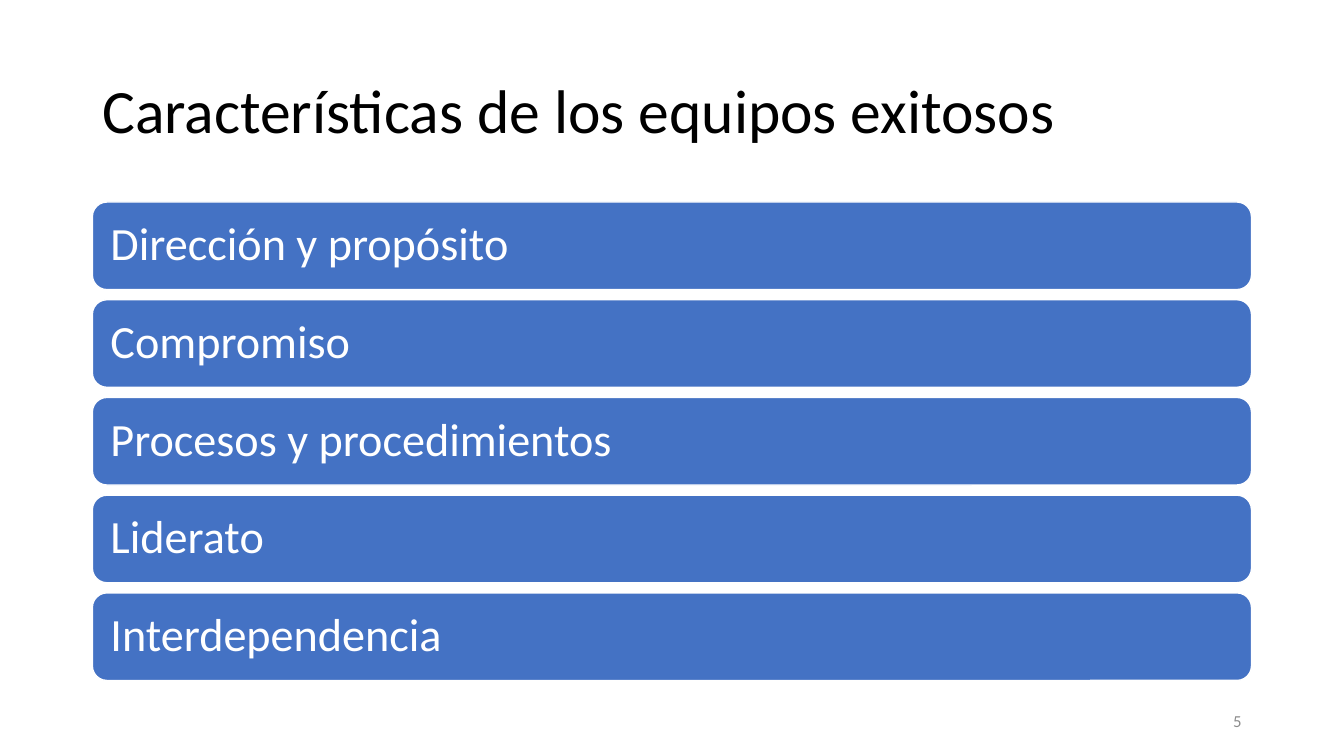
from pptx import Presentation
from pptx.dml.color import RGBColor
from pptx.enum import shapes, text
from pptx.util import Pt

COLORS = {"title": "000000", "bar": "4472C4", "white": "FFFFFF", "number": "8C8C8C"}
FONT = "Calibri"
LEFT, WIDTH = 66, 828
BARS_TOP, BAR_HEIGHT, BAR_PITCH = 144.3, 62.6, 69.8
TRAITS = [
    "Dirección y propósito",
    "Compromiso",
    "Procesos y procedimientos",
    "Liderato",
    "Interdependencia",
]


def color(name):
    return RGBColor.from_string(COLORS[name])


def write(shape, words, size, ink, align=text.PP_ALIGN.LEFT, spacing=1.0):
    """Fill a shape with one vertically centred line of text."""
    frame = shape.text_frame
    frame.text = words
    frame.word_wrap = True
    frame.vertical_anchor = text.MSO_ANCHOR.MIDDLE
    line = frame.paragraphs[0]
    line.alignment = align
    line.line_spacing = spacing
    font = line.runs[0].font
    font.name = FONT
    font.size = Pt(size)
    font.color.rgb = color(ink)


def add_label(slide, words, box, size, ink, **layout):
    label = slide.shapes.add_textbox(*map(Pt, box))
    write(label, words, size, ink, **layout)


def add_bar(slide, words, top):
    bar = slide.shapes.add_shape(
        shapes.MSO_SHAPE.ROUNDED_RECTANGLE, Pt(LEFT), Pt(top), Pt(WIDTH), Pt(BAR_HEIGHT)
    )
    bar.shadow.inherit = False
    bar.fill.solid()
    bar.fill.fore_color.rgb = color("bar")
    bar.line.color.rgb = color("white")
    bar.line.width = Pt(1)
    frame = bar.text_frame
    frame.margin_left = frame.margin_right = Pt(9.9)
    write(bar, words, 33, "white", spacing=0.9)


def main():
    deck = Presentation()
    deck.slide_width, deck.slide_height = Pt(960), Pt(540)
    slide = deck.slides.add_slide(deck.slide_layouts[6])

    add_label(slide, "Características de los equipos exitosos",
              (LEFT, 28.75, WIDTH, 104.4), 44, "title", spacing=0.9)
    for row, trait in enumerate(TRAITS):
        add_bar(slide, trait, BARS_TOP + row * BAR_PITCH)
    add_label(slide, "5", (678, 500.5, 216, 28.75), 12, "number",
              align=text.PP_ALIGN.RIGHT)

    deck.save("out.pptx")


if __name__ == "__main__":
    main()
